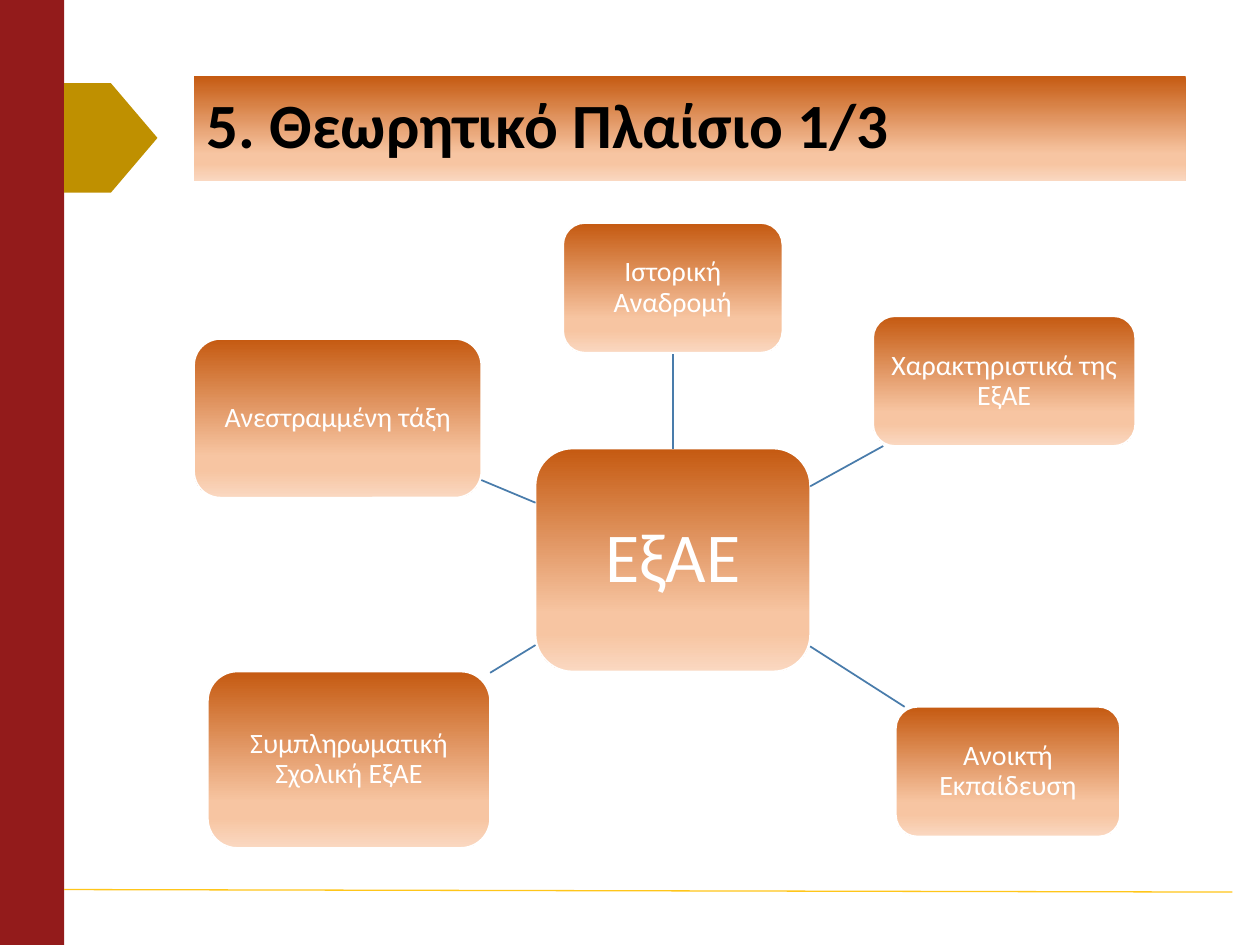
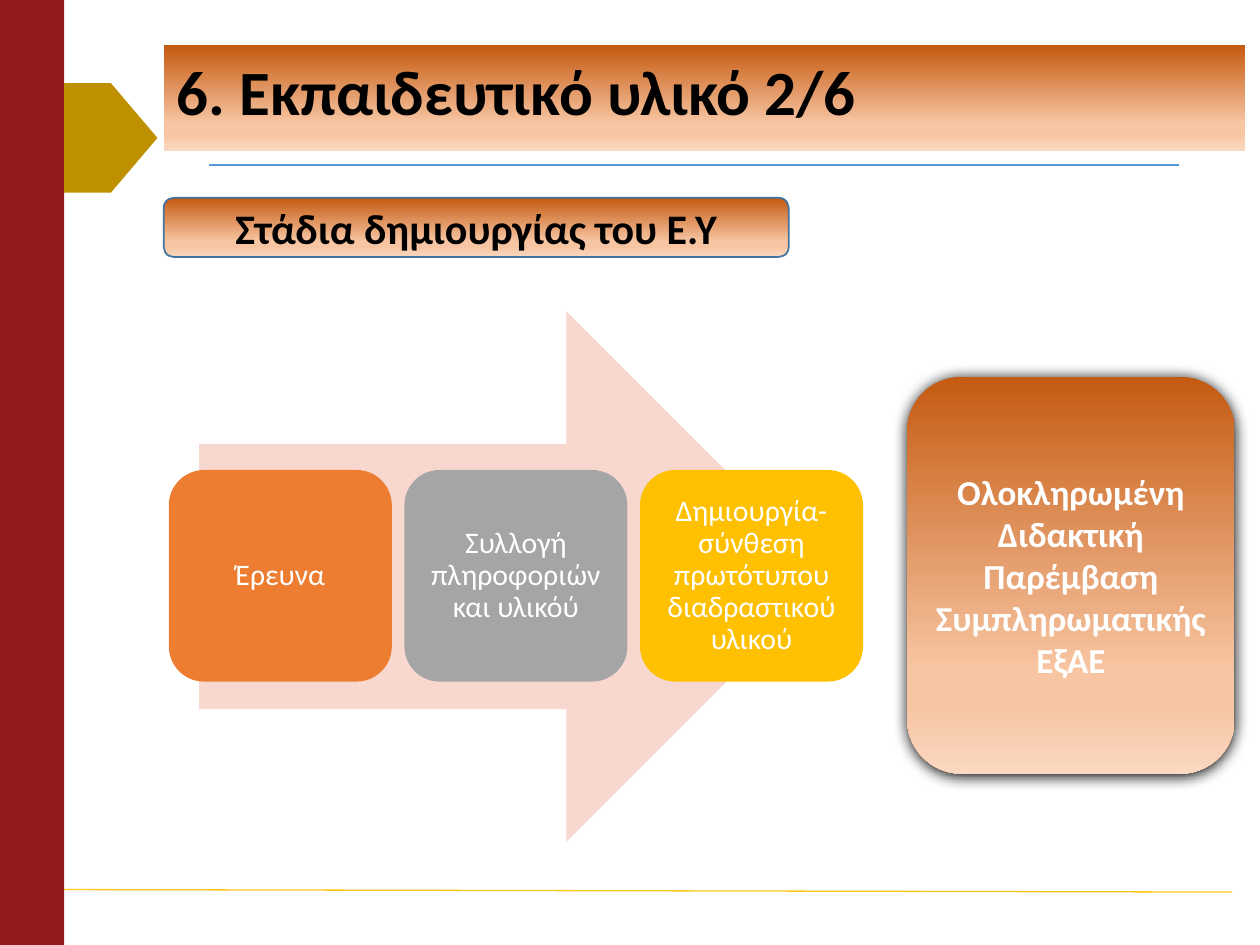
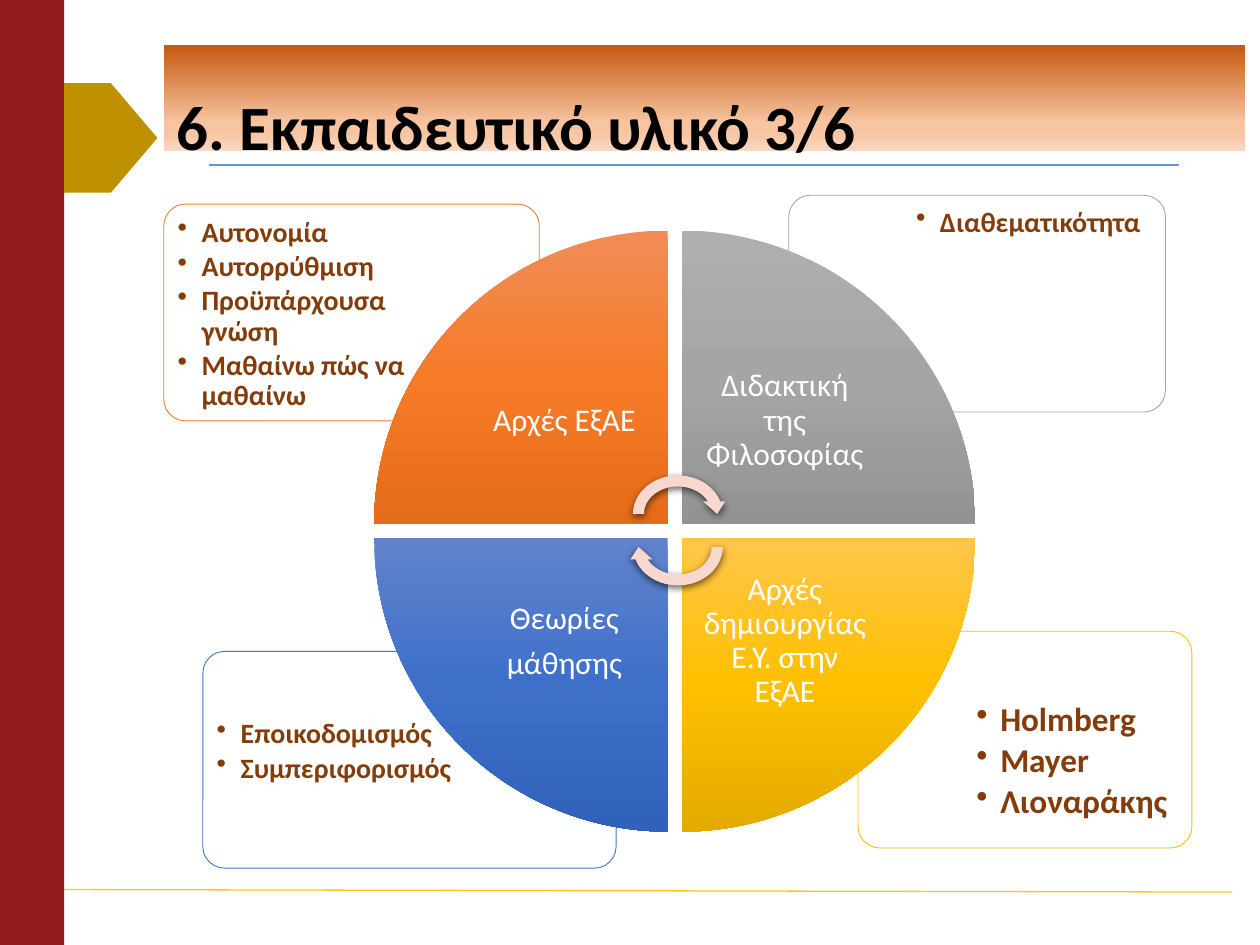
from lxml import etree
from pptx import Presentation
from pptx.dml.color import RGBColor
from pptx.enum.shapes import MSO_CONNECTOR, MSO_SHAPE
from pptx.enum.text import MSO_ANCHOR, MSO_AUTO_SIZE, PP_ALIGN
from pptx.oxml.ns import qn
from pptx.util import Inches, Pt

RECT = MSO_SHAPE.RECTANGLE
ROUND = MSO_SHAPE.ROUNDED_RECTANGLE
PENTAGON = MSO_SHAPE.PENTAGON
RIGHT_ARROW = MSO_SHAPE.RIGHT_ARROW
WEDGE = MSO_SHAPE.PIE_WEDGE
CYCLE_ARROW = MSO_SHAPE.CIRCULAR_ARROW
STRAIGHT = MSO_CONNECTOR.STRAIGHT
LEFT, CENTER = PP_ALIGN.LEFT, PP_ALIGN.CENTER
TOP, MIDDLE = MSO_ANCHOR.TOP, MSO_ANCHOR.MIDDLE
NO_AUTOFIT = MSO_AUTO_SIZE.NONE

FONT = "Calibri"
COLORS = {
    "white": "FFFFFF", "black": "000000", "band": "931B1B", "tab": "BF9000",
    "header_line": "5B9BD5", "footer_line": "FFC61A", "spoke": "497CAB",
    "outline": "43739E", "pale": "F8D7CE", "bullet": "843C0B",
    "orange": "ED7D31", "gray": "A5A5A5", "yellow": "FFC000", "blue": "4472C4",
}
COPPER = [(0, "C55A11"), (74, "F7C5A2"), (83, "F7C5A2"), (100, "FAD8C1")]
WEDGE_STOPS = {
    "orange": [(0, "F18C57"), (50, "F67B28"), (100, "E56C19")],
    "gray": [(0, "AFAFAF"), (50, "A5A5A5"), (100, "939393")],
    "yellow": [(0, "FFC64B"), (50, "FFC000"), (100, "E3AB00")],
    "blue": [(0, "6183CB"), (50, "3E70CA"), (100, "3062BB")],
}


def rgb(name):
    return RGBColor.from_string(COLORS[name])


def fill_gradient(shape, stops):
    shape.fill.gradient()
    shape.fill.gradient_angle = 270
    grad = shape._element.spPr.find(qn("a:gradFill"))
    grad.set("rotWithShape", "0")
    stop_list = grad.find(qn("a:gsLst"))
    for old in list(stop_list):
        stop_list.remove(old)
    for position, color in stops:
        stop = etree.SubElement(stop_list, qn("a:gs"), pos=str(position * 1000))
        etree.SubElement(stop, qn("a:srgbClr"), val=color)


def add_shadow(shape, blur, distance, opacity):
    effects = shape._element.spPr.find(qn("a:effectLst"))
    shadow = etree.SubElement(effects, qn("a:outerShdw"), blurRad=str(Pt(blur)),
                              dist=str(Pt(distance)), dir="5400000", rotWithShape="0")
    color = etree.SubElement(shadow, qn("a:srgbClr"), val=COLORS["black"])
    etree.SubElement(color, qn("a:alpha"), val=str(opacity * 1000))


def add_box(s, kind, box, fill, line=None, width=1, rotation=0):
    sp = s.shapes.add_shape(kind, *map(Inches, box))
    sp.shadow.inherit = False
    sp.rotation = rotation
    if isinstance(fill, list):
        fill_gradient(sp, fill)
    else:
        sp.fill.solid()
        sp.fill.fore_color.rgb = rgb(fill)
    if line:
        sp.line.color.rgb = rgb(line)
        sp.line.width = Pt(width)
    else:
        sp.line.fill.background()
    return sp


def add_line(s, start, end, color, width):
    line = s.shapes.add_connector(STRAIGHT, *map(Inches, (*start, *end)))
    line.line.color.rgb = rgb(color)
    line.line.width = Pt(width)
    etree.SubElement(line._element.spPr, qn("a:effectLst"))


def write(sp, lines, size, color="white", bold=False, align=CENTER, anchor=MIDDLE,
          inset=None, spacing=0.9, after=0, bullet=False):
    tf = sp.text_frame
    tf.word_wrap = True
    tf.auto_size = NO_AUTOFIT
    tf.vertical_anchor = anchor
    if inset is not None:
        tf.margin_left = tf.margin_right = Inches(inset)
        tf.margin_top = tf.margin_bottom = Inches(inset)
    for i, line in enumerate(lines):
        p = tf.add_paragraph() if i else tf.paragraphs[0]
        p.alignment = align
        p.line_spacing = spacing
        p.space_after = Pt(after)
        if bullet:
            pPr = p._p.get_or_add_pPr()
            pPr.set("marL", str(Inches(0.19)))
            pPr.set("indent", str(Inches(-0.19)))
            etree.SubElement(pPr, qn("a:buChar"), char="•")
        r = p.add_run()
        r.text = line
        r.font.name = FONT
        r.font.size = Pt(size)
        r.font.bold = bold
        r.font.color.rgb = rgb(color)


def add_text(s, box, lines, size, **style):
    write(s.shapes.add_textbox(*map(Inches, box)), lines, size, **style)


def add_slide(prs, title, box, anchor=MIDDLE, top=0.05):
    s = prs.slides.add_slide(prs.slide_layouts[5])
    add_box(s, RECT, (0, 0, 0.51, 7.5), "band")
    add_line(s, (1.66, 1.31), (9.36, 1.31), "header_line", 0.75)
    add_line(s, (0.51, 7.06), (9.78, 7.08), "footer_line", 0.75)
    add_box(s, PENTAGON, (0.51, 0.66, 0.74, 0.87), "tab")
    heading = s.shapes.title
    heading._element.getparent().append(heading._element)
    heading.left, heading.top, heading.width, heading.height = map(Inches, box)
    fill_gradient(heading, COPPER)
    write(heading, [title], 36, "black", True, LEFT, anchor)
    heading.text_frame.margin_top = Inches(top)
    return s


def add_node(s, box, text, size=16, inset=0.04):
    node = add_box(s, ROUND, box, COPPER, "white")
    write(node, [text], size, inset=inset)


def build_framework(prs):
    s = add_slide(prs, "5. Θεωρητικό Πλαίσιο 1/3", (1.54, 0.6, 7.87, 0.84))
    add_node(s, (4.25, 3.56, 2.18, 1.77), "ΕξΑΕ", 40, 0.11)
    topics = [
        ("Ιστορική Αναδρομή", (4.47, 1.77, 1.74, 1.03), (5.34, 3.56), (5.34, 2.81)),
        ("Χαρακτηριστικά της ΕξΑΕ", (6.93, 2.51, 2.08, 1.03), (6.43, 3.86), (7.01, 3.54)),
        ("Ανοικτή Εκπαίδευση", (7.11, 5.61, 1.78, 1.03), (6.43, 5.13), (7.18, 5.61)),
        ("Συμπληρωματική Σχολική ΕξΑΕ", (1.65, 5.33, 2.24, 1.4), (4.25, 5.12), (3.89, 5.34)),
        ("Ανεστραμμένη τάξη", (1.54, 2.69, 2.28, 1.26), (4.25, 3.99), (3.82, 3.81)),
    ]
    for text, box, start, end in topics:
        add_line(s, start, end, "spoke", 1)
        add_node(s, box, text)


def build_stages(prs):
    s = add_slide(prs, "6. Εκπαιδευτικό υλικό 2/6", (1.3, 0.36, 8.58, 0.84), top=0)
    add_box(s, RIGHT_ARROW, (1.58, 2.47, 5.02, 4.21), "pale")
    stages = [
        ("Έρευνα", "orange"),
        ("Συλλογή πληροφοριών και υλικόύ", "gray"),
        ("Δημιουργία- σύνθεση πρωτότυπου διαδραστικού υλικού", "yellow"),
    ]
    for i, (text, color) in enumerate(stages):
        stage = add_box(s, ROUND, (1.34 + 1.87 * i, 3.73, 1.77, 1.68), color)
        write(stage, [text], 17, inset=0.07)
    result = add_box(s, ROUND, (7.2, 2.99, 2.6, 3.15), COPPER)
    add_shadow(result, 8.5, 1, 100)
    write(result, ["Ολοκληρωμένη", "Διδακτική Παρέμβαση Συμπληρωματικής ΕξΑΕ"], 20,
          bold=True, spacing=1.0)
    subtitle = add_box(s, ROUND, (1.3, 1.57, 4.96, 0.47), COPPER, "outline")
    write(subtitle, ["Στάδια δημιουργίας του Ε.Υ"], 24, "black", True, spacing=1.0)


def build_cycle(prs):
    s = add_slide(prs, "6. Εκπαιδευτικό υλικό 3/6", (1.3, 0.36, 8.58, 0.84), TOP, 0.4)
    panels = [
        ("yellow", (6.81, 5.01, 2.65, 1.72), (7.65, 5.48, 1.78, 1.21), 19, 0.1,
         ["Holmberg", "Mayer", "Λιοναράκης"]),
        ("blue", (1.61, 5.17, 3.28, 1.72), (1.65, 5.64, 2.22, 1.21), 16, 0.07,
         ["Εποικοδομισμός", "Συμπεριφορισμός"]),
        ("gray", (6.26, 1.55, 2.99, 1.72), (7.2, 1.58, 2.02, 1.21), 16, 0.07,
         ["Διαθεματικότητα"]),
        ("orange", (1.3, 1.62, 2.98, 1.72), (1.34, 1.66, 2.01, 1.21), 16, 0.07,
         ["Αυτονομία", "Αυτορρύθμιση", "Προϋπάρχουσα γνώση", "Μαθαίνω πώς να μαθαίνω"]),
    ]
    for color, box, text_box, size, inset, items in panels:
        panel = add_box(s, ROUND, box, "white", color, 0.5)
        panel.adjustments[0] = 0.1
        add_text(s, text_box, items, size, color="bullet", bold=True, align=LEFT,
                 anchor=TOP, inset=inset, after=size * 0.15, bullet=True)

    wedges = [
        ("orange", 2.97, 1.83, 3.66, 2.52, ["Αρχές ΕξΑΕ"]),
        ("gray", 5.41, 1.83, 5.41, 2.52, ["Διδακτική της Φιλοσοφίας"]),
        ("yellow", 5.41, 4.27, 5.41, 4.27, ["Αρχές δημιουργίας Ε.Υ. στην ΕξΑΕ"]),
        ("blue", 2.97, 4.27, 3.66, 4.27, ["Θεωρίες", "μάθησης"]),
    ]
    for i, (color, left, top, text_left, text_top, lines) in enumerate(wedges):
        add_box(s, WEDGE, (left, top, 2.33, 2.33), WEDGE_STOPS[color], rotation=90 * i)
        add_text(s, (text_left, text_top, 1.64, 1.64), lines, 18, inset=0.14, after=6.3)
    for top, rotation in ((3.73, 0), (3.99, 180)):
        arrow = add_box(s, CYCLE_ARROW, (4.98, top, 0.8, 0.7), "pale", rotation=rotation)
        add_shadow(arrow, 4.5, 1.5, 63)


def main():
    prs = Presentation()
    prs.slide_width, prs.slide_height = Inches(10), Inches(7.5)
    build_framework(prs)
    build_stages(prs)
    build_cycle(prs)
    prs.save("out.pptx")


if __name__ == "__main__":
    main()
